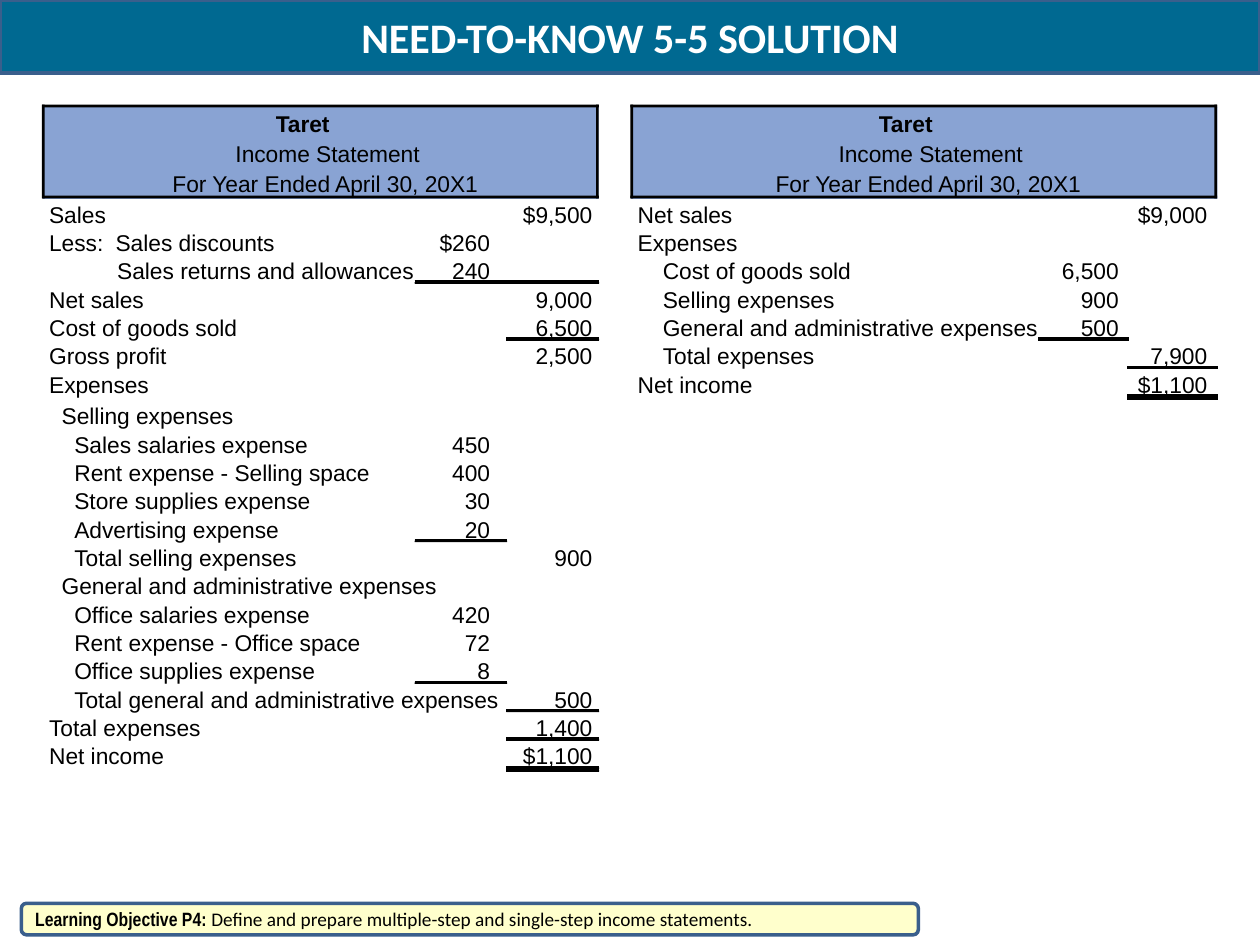
from lxml import etree
from pptx import Presentation
from pptx.dml.color import RGBColor
from pptx.enum.shapes import MSO_CONNECTOR, MSO_SHAPE
from pptx.enum.text import MSO_ANCHOR, PP_ALIGN
from pptx.oxml.ns import qn
from pptx.util import Pt

RECT, ROUND = MSO_SHAPE.RECTANGLE, MSO_SHAPE.ROUNDED_RECTANGLE
LINE = MSO_CONNECTOR.STRAIGHT
LEFT, CENTER, RIGHT = PP_ALIGN.LEFT, PP_ALIGN.CENTER, PP_ALIGN.RIGHT
MIDDLE = MSO_ANCHOR.MIDDLE

COLORS = {"ink": "000000", "head": "89A3D3", "bar": "006991",
          "edge": "3A5F8C", "note": "FFFFCC", "white": "FFFFFF"}
BODY = {"name": "Arial", "size": Pt(13), "bold": False}
BOLD = {**BODY, "bold": True}
TITLE = {"name": "Calibri", "size": Pt(24), "bold": True}
GOAL = {"name": "Arial Narrow", "size": Pt(11), "bold": True}
NOTE = {"name": "Calibri", "size": Pt(11), "bold": False}

TOP, PITCH = 114.5, 16.2      # first row and row step
DROP = 14.4                   # from row top to its rule
STEP, TAB = 7.2, 38           # label indent and tab stop
HEAD_Y, HEAD_H, BAR = 59.8, 53.6, 1.6
TITLES = [("Taret", 59, 62.6, BOLD),
          ("Income Statement", 36, 79.9, BODY),
          ("For Year Ended April 30, 20X1", 0, 97.2, BODY)]

# Row: indent, label, amount, amount column, rules under it
MULTI = {
    "x": 24, "w": 318.2, "label": 28.1, "title": 98.6,
    "ends": (280, 338.4), "rules": ((236.9, 53), (289.4, 53)),
    "gap_at": 7, "gap": 1.8,
    "rows": [
        (0, "Sales", "$9,500", 1, ""),
        (0, "Less:\tSales discounts", "$260", 0, ""),
        (5.4, "Sales returns and allowances", "240", 0, "wide"),
        (0, "Net sales", "9,000", 1, ""),
        (0, "Cost of goods sold", "6,500", 1, "one"),
        (0, "Gross profit", "2,500", 1, ""),
        (0, "Expenses", "", 0, ""),
        (1, "Selling expenses", "", 0, ""),
        (2, "Sales salaries expense", "450", 0, ""),
        (2, "Rent expense - Selling space", "400", 0, ""),
        (2, "Store supplies expense", "30", 0, ""),
        (2, "Advertising expense", "20", 0, "one"),
        (2, "Total selling expenses", "900", 1, ""),
        (1, "General and administrative expenses", "", 0, ""),
        (2, "Office salaries expense", "420", 0, ""),
        (2, "Rent expense - Office space", "72", 0, ""),
        (2, "Office supplies expense", "8", 0, "one"),
        (2, "Total general and administrative expenses", "500", 1, "one"),
        (0, "Total expenses", "1,400", 1, "one"),
        (0, "Net income", "$1,100", 1, "two"),
    ],
}
SINGLE = {
    "x": 360.2, "w": 335.4, "label": 364.4, "title": 443.2,
    "ends": (639.2, 689.8), "rules": ((593.3, 51.8), (644.2, 51.6)),
    "gap_at": 7, "gap": 0,
    "rows": [
        (0, "Net sales", "$9,000", 1, ""),
        (0, "Expenses", "", 0, ""),
        (2, "Cost of goods sold", "6,500", 0, ""),
        (2, "Selling expenses", "900", 0, ""),
        (2, "General and administrative expenses", "500", 0, "one"),
        (2, "Total expenses", "7,900", 1, "one"),
        (0, "Net income", "$1,100", 1, "two"),
    ],
}


def rgb(key):
    return RGBColor.from_string(COLORS[key])


def add_run(para, text, style, color="ink"):
    run = para.add_run()
    run.text = text
    for key, value in style.items():
        setattr(run.font, key, value)
    run.font.color.rgb = rgb(color)


def add_box(slide, kind, x, y, w, h, fill, edge=None):
    box = slide.shapes.add_shape(kind, Pt(x), Pt(y), Pt(w), Pt(h))
    box.shadow.inherit = False
    box.fill.solid()
    box.fill.fore_color.rgb = rgb(fill)
    if edge:
        box.line.color.rgb = rgb(edge)
        box.line.width = Pt(2)
    else:
        box.line.fill.background()
    return box


def add_text(slide, text, x, y, w, h, style=BODY, align=LEFT):
    frame = slide.shapes.add_textbox(Pt(x), Pt(y), Pt(w), Pt(h)).text_frame
    for side in ("left", "top", "right", "bottom"):
        setattr(frame, f"margin_{side}", 0)
    frame.word_wrap = True
    para = frame.paragraphs[0]
    para.alignment = align
    add_run(para, text, style)
    return para


def add_label(slide, text, x, y, style=BODY):
    para = add_text(slide, text, x, y, 6.2 * len(text) + 10, 18, style)
    if "\t" in text:
        props = para._p.get_or_add_pPr()
        stops = etree.SubElement(props, qn("a:tabLst"))
        etree.SubElement(stops, qn("a:tab"), pos=str(Pt(TAB)), algn="l")


def add_sum(slide, text, end, y):
    """Set an amount so that it ends at a column's right edge."""
    wide = sum(3.6 if mark == "," else 7.25 for mark in text) + 1
    add_text(slide, text, end - wide, y, wide, 16, align=RIGHT)


def add_rule(slide, x, y, w):
    """Draw a thin bar topped by a hairline."""
    line = slide.shapes.add_connector(LINE, Pt(x), Pt(y), Pt(x + w), Pt(y))
    line.line.color.rgb = rgb("ink")
    line.line.width = Pt(0)
    etree.SubElement(line._element.spPr, qn("a:effectLst"))
    add_box(slide, RECT, x, y, w, 0.9, "ink")


def add_head(slide, part):
    x, w = part["x"], part["w"]
    add_box(slide, RECT, x + 0.5, HEAD_Y + 1.4, w - 0.5, HEAD_H - 1.2, "head")
    for text, shift, y, style in TITLES:
        add_label(slide, text, part["title"] + shift, y, style)
    for left in (x, x + w - BAR):
        add_box(slide, RECT, left, HEAD_Y, BAR, HEAD_H, "ink")
    for y in (HEAD_Y, HEAD_Y + HEAD_H - BAR):
        add_box(slide, RECT, x, y, w, BAR, "ink")


def add_part(slide, part):
    """Draw one income statement: heading, rows and rules."""
    add_head(slide, part)
    for i, (level, label, amount, col, rule) in enumerate(part["rows"]):
        y = TOP + i * PITCH + (part["gap"] if i >= part["gap_at"] else 0)
        add_label(slide, label, part["label"] + level * STEP, y)
        if amount:
            add_sum(slide, amount, part["ends"][col], y)
        x, w = part["rules"][col]
        if rule == "wide":
            last, span = part["rules"][1]
            w = last + span - x
        if rule:
            add_rule(slide, x, y + DROP, w)
        if rule == "two":
            add_rule(slide, x, y + DROP + 1.6, w)


def add_banner(slide, kind, area, fill, runs, align):
    box = add_box(slide, kind, *area, fill, "edge")
    frame = box.text_frame
    frame.word_wrap = True
    frame.vertical_anchor = MIDDLE
    para = frame.paragraphs[0]
    para.alignment = align
    for text, style, color in runs:
        add_run(para, text, style, color)


def main():
    deck = Presentation()
    deck.slide_width, deck.slide_height = Pt(720), Pt(540)
    slide = deck.slides.add_slide(deck.slide_layouts[6])
    for part in (SINGLE, MULTI):
        add_part(slide, part)
    add_banner(slide, RECT, (0, 0, 720, 41.8), "bar",
               [("NEED-TO-KNOW 5-5 SOLUTION", TITLE, "white")], CENTER)
    add_banner(slide, ROUND, (12.2, 516.2, 512.6, 18), "note",
               [("Learning Objective P4: ", GOAL, "ink"),
                ("Define and prepare multiple-step and single-step "
                 "income statements.", NOTE, "ink")], LEFT)
    deck.save("out.pptx")


if __name__ == "__main__":
    main()
